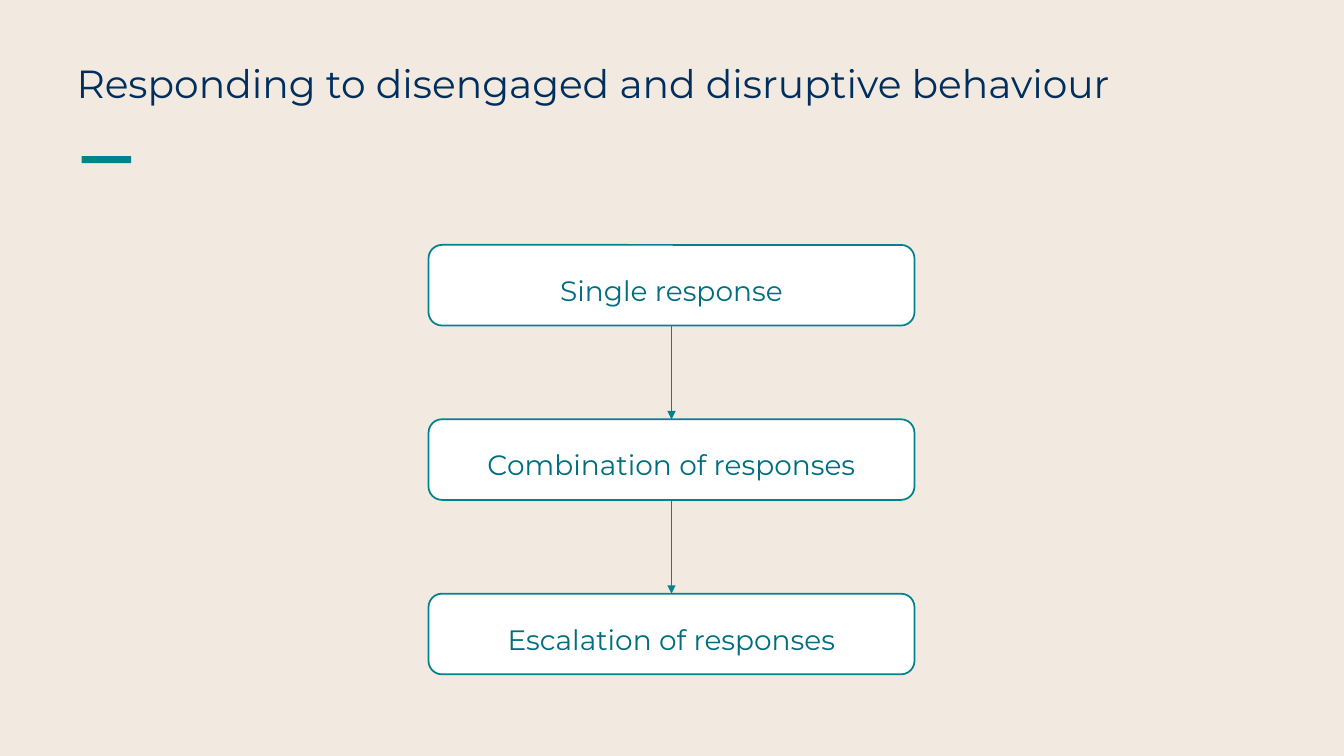
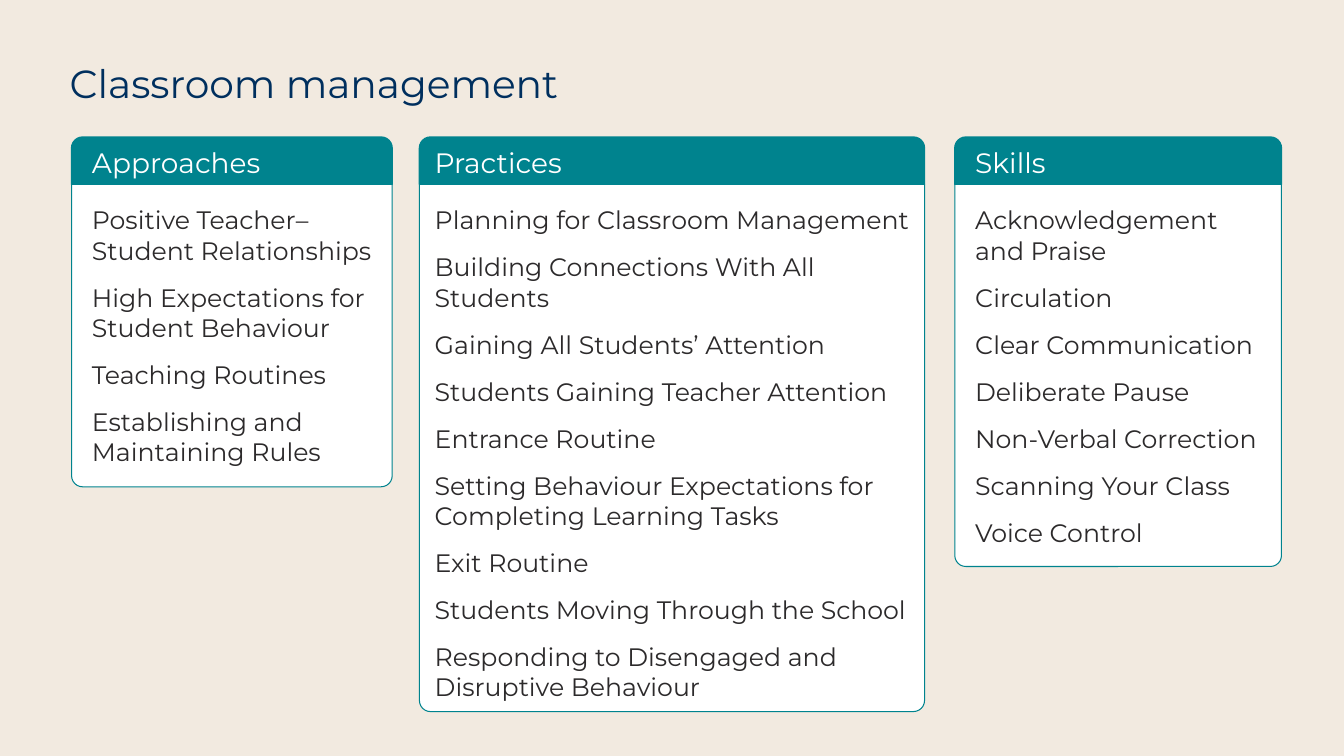
from lxml.etree import SubElement
from pptx import Presentation
from pptx.dml.color import RGBColor
from pptx.enum.shapes import MSO_CONNECTOR, MSO_SHAPE as SHAPE
from pptx.enum.text import MSO_ANCHOR as ANCHOR, PP_ALIGN as ALIGN
from pptx.oxml.ns import qn
from pptx.util import Inches, Pt

FONT = "Montserrat"
SAND, WHITE, NAVY, TEAL, DEEP_TEAL, INK = (
    "F2EAE0", "FFFFFF", "002F5E", "00838E", "006E7F", "2C2A2B")

RESPONSES_TITLE = "Responding to disengaged and disruptive behaviour"
RESPONSES = ["Single response", "Combination of responses", "Escalation of responses"]

MANAGEMENT_TITLE = "Classroom management"
# heading, left, width, body height, text indent, items
COLUMNS = [
    ("Approaches", 0.71, 3.18, 3.00, 0.17, [
        "Positive Teacher–Student Relationships",
        "High Expectations for Student Behaviour",
        "Teaching Routines",
        "Establishing and Maintaining Rules",
    ]),
    ("Practices", 4.16, 5.01, 5.23, 0.12, [
        "Planning for Classroom Management",
        "Building Connections With All Students",
        "Gaining All Students’ Attention",
        "Students Gaining Teacher Attention",
        "Entrance Routine",
        "Setting Behaviour Expectations for Completing Learning Tasks",
        "Exit Routine",
        "Students Moving Through the School",
        "Responding to Disengaged and Disruptive Behaviour",
    ]),
    ("Skills", 9.47, 3.24, 3.79, 0.17, [
        "Acknowledgement\vand Praise",
        "Circulation",
        "Clear Communication",
        "Deliberate Pause",
        "Non-Verbal Correction",
        "Scanning Your Class",
        "Voice Control",
    ]),
]

STEP_LEFT, STEP_TOP, STEP_WIDTH, STEP_HEIGHT, STEP_PITCH = 4.25, 2.43, 4.82, 0.8, 1.73
HEADER_TOP, HEADER_HEIGHT, CORNER = 1.36, 0.47, 0.11
TOP, BOTTOM = 2, 0  # connection sites of a rounded rectangle: 0 top, 2 bottom
TOP, BOTTOM = BOTTOM, TOP


def rgb(color):
    return RGBColor.from_string(color)


def write(shape, lines, size, color, margins, anchor=ANCHOR.MIDDLE,
          align=ALIGN.LEFT, spacing=None, after=0):
    """Fill a shape with paragraphs; margins are left, top, right, bottom."""
    frame = shape.text_frame
    frame.word_wrap = True
    frame.vertical_anchor = anchor
    (frame.margin_left, frame.margin_top,
     frame.margin_right, frame.margin_bottom) = map(Inches, margins)
    for i, line in enumerate(lines):
        paragraph = frame.add_paragraph() if i else frame.paragraphs[0]
        paragraph.text = line
        paragraph.alignment = align
        paragraph.line_spacing = spacing
        paragraph.space_after = Pt(after)
        font = paragraph.font
        font.name, font.size = FONT, Pt(size)
        font.color.rgb = rgb(color)


def add_panel(slide, kind, box, fill, line_width=0):
    panel = slide.shapes.add_shape(kind, *map(Inches, box))
    panel.shadow.inherit = False
    panel.fill.solid()
    panel.fill.fore_color.rgb = rgb(fill)
    if line_width:
        panel.line.color.rgb = rgb(TEAL)
        panel.line.width = Pt(line_width)
    else:
        panel.line.fill.background()
    return panel


def add_arrow(slide, upper, lower):
    arrow = slide.shapes.add_connector(MSO_CONNECTOR.STRAIGHT, 0, 0, 0, 0)
    arrow.begin_connect(upper, BOTTOM)
    arrow.end_connect(lower, TOP)
    arrow.line.color.rgb = rgb(TEAL)
    arrow.line.width = Pt(1.25)
    SubElement(arrow.line._get_or_add_ln(), qn("a:tailEnd"), type="triangle")
    SubElement(arrow._element.spPr, qn("a:effectLst"))


def add_titled_slide(prs, title, left):
    slide = prs.slides.add_slide(prs.slide_layouts[6])
    box = slide.shapes.add_textbox(*map(Inches, (left, 0.44, 11.94, 0.83)))
    write(box, [title], 28, NAVY, (0, 0.05, 0.1, 0.05), spacing=0.9)
    return slide


def build_responses(prs):
    slide = add_titled_slide(prs, RESPONSES_TITLE, 0.76)
    add_panel(slide, SHAPE.RECTANGLE, (0.81, 1.55, 0.49, 0.07), TEAL)
    previous = None
    for i, response in enumerate(RESPONSES):
        box = (STEP_LEFT, STEP_TOP + i * STEP_PITCH, STEP_WIDTH, STEP_HEIGHT)
        step = add_panel(slide, SHAPE.ROUNDED_RECTANGLE, box, WHITE, 1.25)
        write(step, [response], 20, DEEP_TEAL, (0.1, 0.05, 0.1, 0.12),
              align=ALIGN.CENTER, spacing=1.5)
        if previous:
            add_arrow(slide, previous, step)
        previous = step


def build_management(prs):
    slide = add_titled_slide(prs, MANAGEMENT_TITLE, 0.69)
    body_top = HEADER_TOP + HEADER_HEIGHT
    for heading, left, width, height, indent, items in COLUMNS:
        header = add_panel(slide, SHAPE.ROUND_2_SAME_RECTANGLE,
                           (left, HEADER_TOP, width, HEADER_HEIGHT), TEAL, 1)
        header.adjustments[0] = CORNER / HEADER_HEIGHT
        write(header, [heading], 20, WHITE, (indent, 0, 0.07, 0))

        body = add_panel(slide, SHAPE.ROUND_2_SAME_RECTANGLE,
                         (left, body_top, width, height), WHITE, 0.75)
        body.adjustments[0] = 0
        body.adjustments[1] = CORNER / min(width, height)
        write(body, items, 18, INK, (indent, 0.2, 0.07, 0.12),
              anchor=ANCHOR.TOP, after=12)


def main():
    prs = Presentation()
    prs.slide_width, prs.slide_height = Inches(13.33), Inches(7.5)
    backdrop = prs.slide_master.background.fill
    backdrop.solid()
    backdrop.fore_color.rgb = rgb(SAND)
    build_responses(prs)
    build_management(prs)
    prs.save("out.pptx")


if __name__ == "__main__":
    main()
